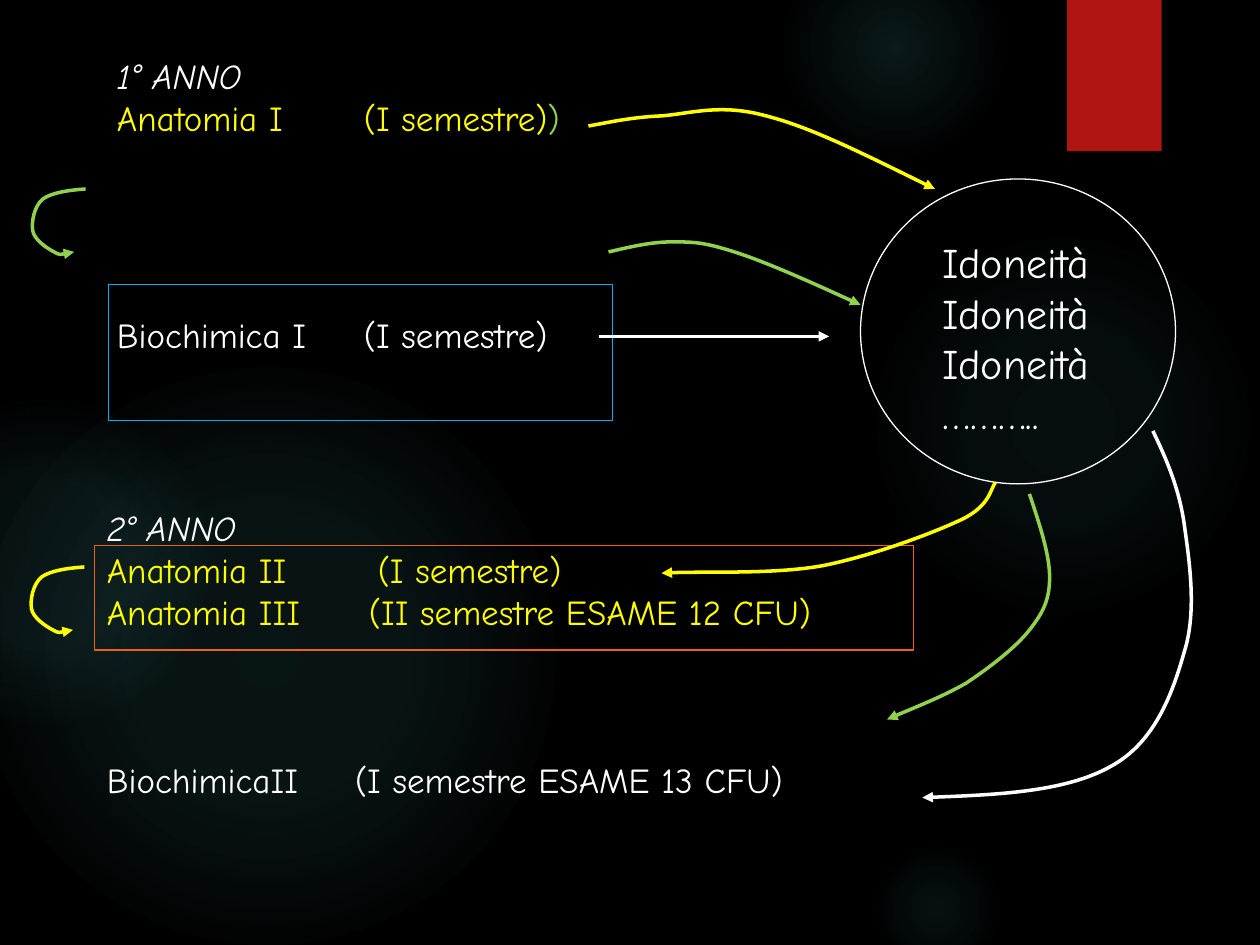
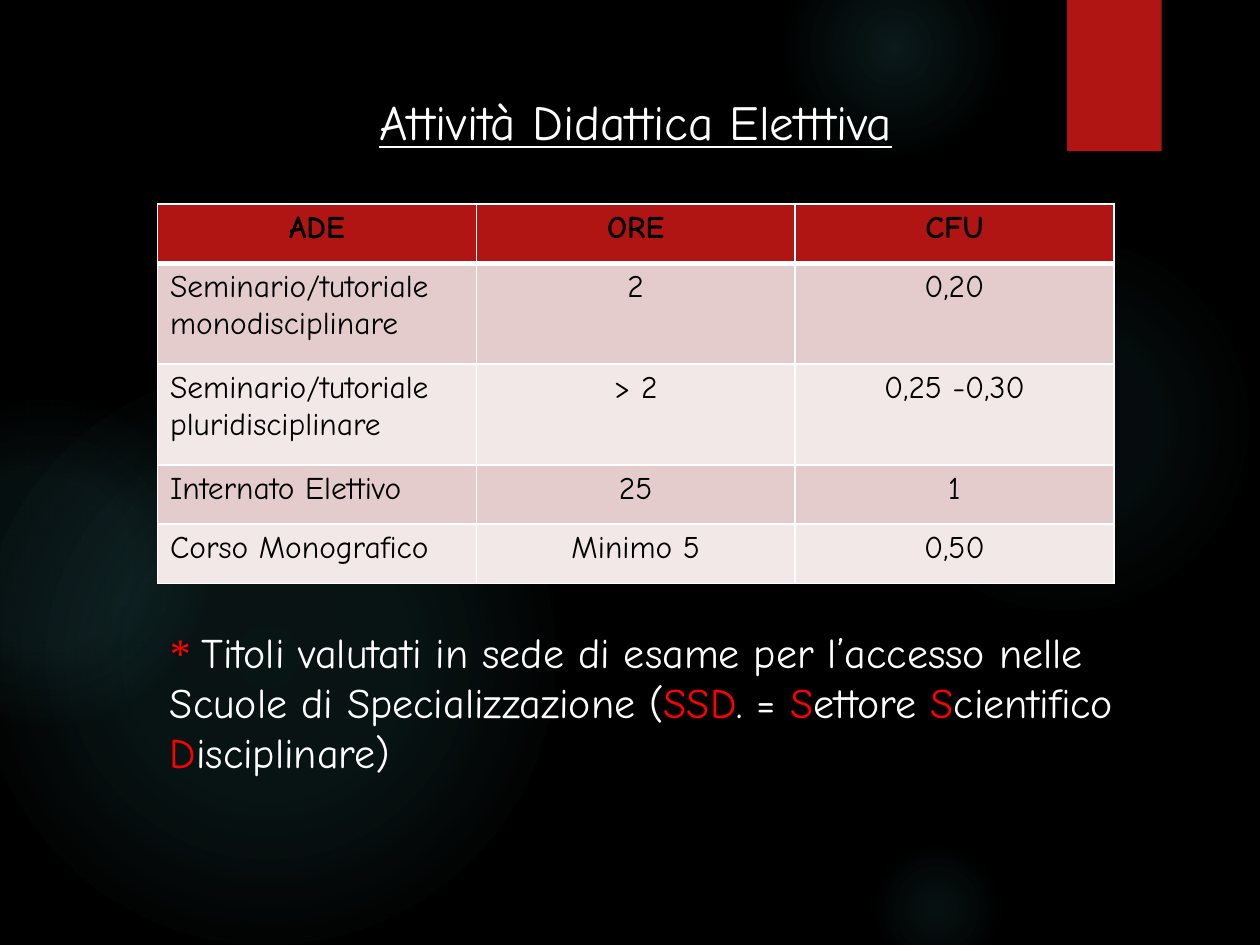
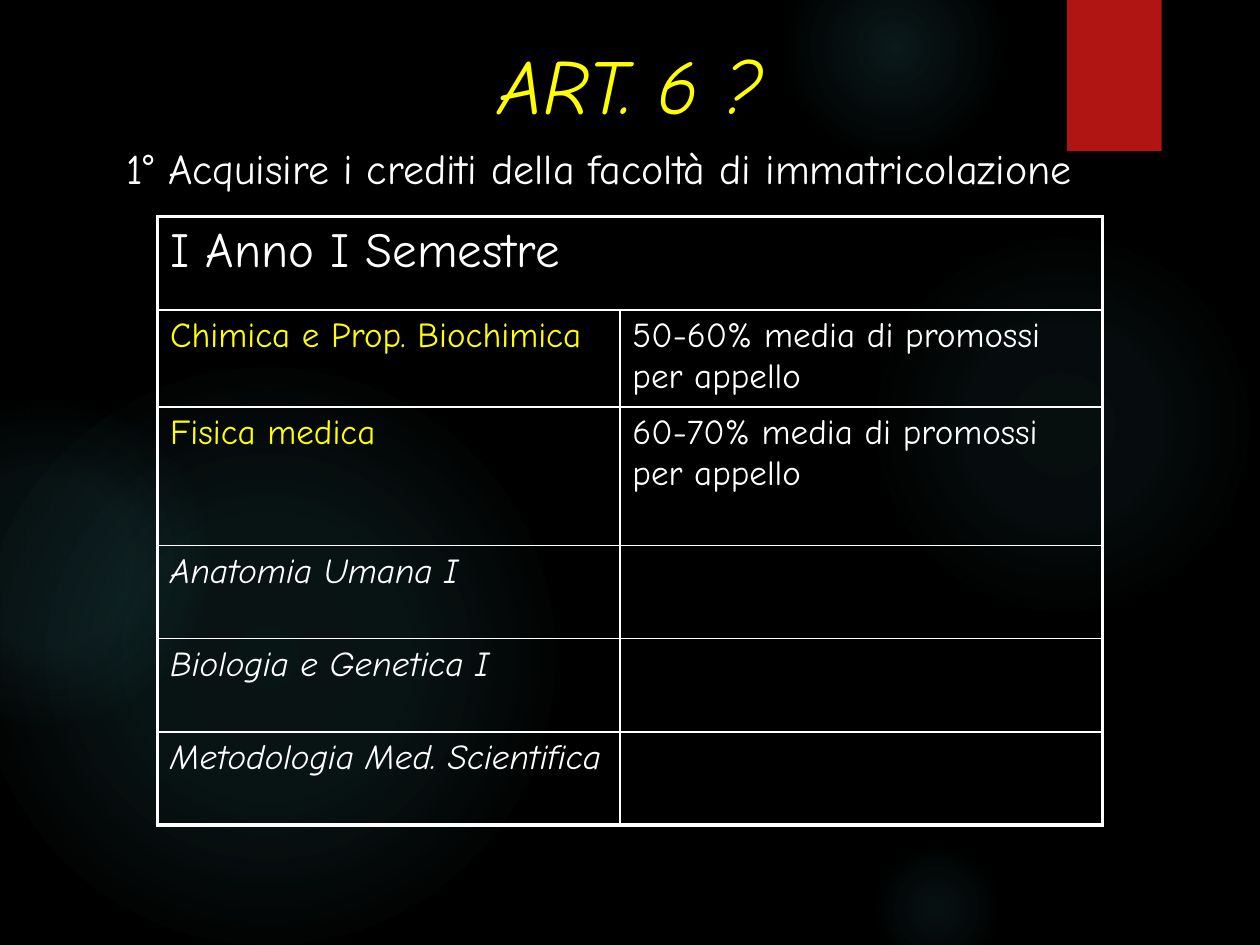
from dataclasses import dataclass
from itertools import product

from lxml.etree import SubElement
from pptx import Presentation
from pptx.dml.color import RGBColor
from pptx.enum.shapes import MSO_CONNECTOR, MSO_SHAPE
from pptx.enum.text import PP_ALIGN
from pptx.oxml import parse_xml
from pptx.oxml.ns import nsdecls, qn
from pptx.util import Inches, Pt

BLACK = RGBColor(0x00, 0x00, 0x00)
WHITE = RGBColor(0xFF, 0xFF, 0xFF)
YELLOW = RGBColor(0xFF, 0xFF, 0x00)
GREEN = RGBColor(0x92, 0xD0, 0x50)
BLUE = RGBColor(0x00, 0xB0, 0xF0)
ORANGE = RGBColor(0xEA, 0x63, 0x12)
RED = RGBColor(0xFF, 0x00, 0x00)
CRIMSON = RGBColor(0xB0, 0x15, 0x13)
ROSE = RGBColor(0xE4, 0xCC, 0xCC)
PALE_ROSE = RGBColor(0xF2, 0xE8, 0xE7)
TEAL = RGBColor(0x50, 0xB9, 0xC1)

FONT = "Comic Neue"
GLOWS = [
    ((6.89, 1.83, 3.08, 3.08), ((0, 7), (36, 6), (69, 0))),
    ((6.22, -0.5, 1.75, 1.75), ((0, 14), (36, 7), (73, 0))),
    ((6.89, 6.67, 1.08, 1.08), ((0, 9), (36, 5), (66, 0))),
    ((-0.17, 2.92, 4.58, 4.58), ((0, 11), (36, 10), (75, 0))),
    ((-0.92, 3.17, 2.58, 2.58), ((0, 8), (36, 8), (72, 0))),
]
RIBBON = (8.47, 0, 0.75, 1.2)


@dataclass
class Line:
    """One paragraph: its text or coloured runs, and how it looks."""

    text: object
    size: float = 20
    color: RGBColor = WHITE
    bold: bool = False
    italic: bool = False
    underline: bool = False
    align: PP_ALIGN = PP_ALIGN.LEFT
    tab: float = 0
    before: float = 0


class Deck:
    """Holds the shared style and the slide being drawn."""

    def __init__(self):
        self.presentation = Presentation()
        self.presentation.slide_width = Inches(10)
        self.presentation.slide_height = Inches(7.5)
        background = self.presentation.slide_master.background.fill
        background.solid()
        background.fore_color.rgb = BLACK
        self.slide = None

    def new_slide(self):
        """Start a slide with its glows and ribbon."""
        self.slide = self.presentation.slides.add_slide(self.presentation.slide_layouts[6])
        for box, stops in GLOWS:
            self.glow(box, stops)
        self.shape(MSO_SHAPE.RECTANGLE, RIBBON, fill=CRIMSON)

    def shape(self, kind, box, fill=None, line=None):
        """Draw a preset shape."""
        shape = self.slide.shapes.add_shape(kind, *map(Inches, box))
        shape.shadow.inherit = False
        for part, color in ((shape.fill, fill), (shape.line.fill, line)):
            if color is None:
                part.background()
            else:
                part.solid()
                part.fore_color.rgb = color
        if line is not None:
            shape.line.width = Pt(0.75)
        return shape

    def glow(self, box, stops):
        """Draw a soft circle from (position, opacity) stops."""
        properties = self.shape(MSO_SHAPE.OVAL, box)._element.spPr
        colors = "".join(
            f'<a:gs pos="{position * 1000}"><a:srgbClr val="{TEAL}">'
            f'<a:alpha val="{opacity * 1000}"/></a:srgbClr></a:gs>'
            for position, opacity in stops
        )
        gradient = parse_xml(
            f'<a:gradFill {nsdecls("a")}><a:gsLst>{colors}</a:gsLst><a:path path="circle">'
            '<a:fillToRect l="50000" t="50000" r="50000" b="50000"/></a:path></a:gradFill>'
        )
        properties.replace(properties.find(qn("a:noFill")), gradient)

    def arrow_line(self, shape, color):
        """Give a line its colour, width and arrowhead."""
        shape.line.color.rgb = color
        shape.line.width = Pt(2)
        SubElement(shape.line._get_or_add_ln(), qn("a:tailEnd"), type="triangle")

    def curve(self, points, color):
        """Draw an arrow along cubic curves: a start, then three points for each."""
        start, *others = [tuple(map(Inches, point)) for point in points]
        builder = self.slide.shapes.build_freeform(*start)
        builder.add_line_segments(others, close=False)
        shape = builder.convert_to_shape()
        shape.shadow.inherit = False
        shape.fill.background()
        outline = next(shape._element.iter(qn("a:path")))
        segments = outline.findall(qn("a:lnTo"))
        for index, segment in enumerate(segments):
            if index % 3 == 0:
                bezier = SubElement(outline, qn("a:cubicBezTo"))
            bezier.append(segment[0])
            outline.remove(segment)
        self.arrow_line(shape, color)

    def straight_arrow(self, start, end, color):
        """Draw a straight arrow."""
        connector = self.slide.shapes.add_connector(
            MSO_CONNECTOR.STRAIGHT, *map(Inches, start + end)
        )
        self.arrow_line(connector, color)
        SubElement(connector._element.spPr, qn("a:effectLst"))

    def fill_text(self, text_frame, lines):
        """Put lines into a text frame."""
        for index, line in enumerate(lines):
            paragraph = text_frame.add_paragraph() if index else text_frame.paragraphs[0]
            paragraph.alignment = line.align
            if line.before:
                paragraph.space_before = Pt(line.before)
            if line.tab:
                tabs = SubElement(paragraph._p.get_or_add_pPr(), qn("a:tabLst"))
                SubElement(tabs, qn("a:tab"), pos=str(Inches(line.tab)), algn="l")
            runs = [(line.text, line.color)] if isinstance(line.text, str) else line.text
            for text, color, *font in runs:
                run = paragraph.add_run()
                run.text = text
                run.font.name = font[0] if font else FONT
                run.font.size = Pt(line.size)
                run.font.color.rgb = color
                run.font.bold = line.bold
                run.font.italic = line.italic
                run.font.underline = line.underline

    def text(self, box, *lines):
        """Add a text box."""
        text_frame = self.slide.shapes.add_textbox(*map(Inches, box)).text_frame
        text_frame.word_wrap = True
        self.fill_text(text_frame, lines)

    def table(self, corner, widths, heights, rows, fills, outer=1, header=1):
        """Add a table; a row with fewer lines than columns spans the rest."""
        size = (sum(widths), sum(heights))
        frame = self.slide.shapes.add_table(
            len(rows), len(widths), *map(Inches, corner + size)
        )
        table = frame.table
        table.first_row = table.horz_banding = False
        for column, width in zip(table.columns, widths):
            column.width = Inches(width)
        for row, height in zip(table.rows, heights):
            row.height = Inches(height)
        for index, lines in enumerate(rows):
            if len(lines) < len(widths):
                table.cell(index, len(lines) - 1).merge(table.cell(index, len(widths) - 1))
            for column, line in enumerate(lines):
                self.fill_text(table.cell(index, column).text_frame, [line])
        last = len(rows) - 1
        for row, column in product(range(len(rows)), range(len(widths))):
            cell = table.cell(row, column)
            if fills[row] is None:
                cell.fill.background()
            else:
                cell.fill.solid()
                cell.fill.fore_color.rgb = fills[row]
            right = column + cell.span_width >= len(widths)
            self.borders(cell, {
                "L": 1 if column else outer,
                "R": outer if right else 1,
                "T": {0: outer, 1: header}.get(row, 1),
                "B": {0: header, last: outer}.get(row, 1),
            })

    def borders(self, cell, widths):
        """Draw a cell's white borders, in points by side."""
        properties = cell._tc.get_or_add_tcPr()
        for index, (side, width) in enumerate(widths.items()):
            properties.insert(index, parse_xml(
                f'<a:ln{side} {nsdecls("a")} w="{Pt(width)}"><a:solidFill>'
                f'<a:srgbClr val="{WHITE}"/></a:solidFill></a:ln{side}>'
            ))


def build_course_path(deck):
    """Draw the exam path over the first two years."""
    deck.new_slide()
    deck.text(
        (0.83, 0.38, 4.01, 2.52),
        Line("1° ANNO", italic=True),
        Line([("Anatomia I\t(I semestre)", YELLOW), (")", GREEN)], tab=1.96),
        Line("Biochimica I\t(I semestre)", tab=1.96, before=100),
    )
    deck.text(
        (0.75, 3.97, 6.37, 2.79),
        Line("2° ANNO", italic=True),
        Line("Anatomia II\t(I semestre)", color=YELLOW, tab=2.15),
        Line("Anatomia III\t(II semestre ESAME 12 CFU)", color=YELLOW, tab=2.08),
        Line("BiochimicaII\t(I semestre ESAME 13 CFU)", tab=1.97, before=72),
    )
    deck.shape(MSO_SHAPE.OVAL, (6.83, 1.42, 2.5, 2.42), line=WHITE)
    passes = ["Idoneità"] * 3 + ["……….."]
    deck.text((7.38, 1.83, 1.53, 1.7), *[Line(word, size=24) for word in passes])
    deck.shape(MSO_SHAPE.RECTANGLE, (0.86, 2.26, 4, 1.08), line=BLUE)
    deck.shape(MSO_SHAPE.RECTANGLE, (0.75, 4.33, 6.5, 0.83), line=ORANGE)

    to_circle = [
        ([(4.67, 1), (4.84, 0.97), (5.01, 0.93), (5.25, 0.92), (5.49, 0.9), (5.72, 0.82),
          (6.08, 0.92), (6.44, 1.01), (6.93, 1.26), (7.42, 1.5)], YELLOW),
        ([(4.83, 2), (5, 1.96), (5.17, 1.92), (5.33, 1.92), (5.5, 1.92), (5.58, 1.92),
          (5.83, 2), (6.08, 2.08), (6.46, 2.25), (6.83, 2.42)], GREEN),
    ]
    from_circle = [
        ([(7.9, 3.83), (7.86, 3.88), (7.86, 4.01), (7.64, 4.12), (7.41, 4.23), (6.93, 4.41),
          (6.53, 4.49), (6.14, 4.56), (5.52, 4.53), (5.25, 4.55)], YELLOW),
        ([(8.17, 3.92), (8.25, 4.16), (8.33, 4.4), (8.33, 4.58), (8.33, 4.76), (8.28, 4.86),
          (8.17, 5), (8.06, 5.14), (7.85, 5.3), (7.67, 5.42), (7.48, 5.53), (7.17, 5.65),
          (7.04, 5.71)], GREEN),
        ([(9.15, 3.42), (9.26, 3.65), (9.36, 3.88), (9.4, 4.17), (9.44, 4.46), (9.5, 4.85),
          (9.4, 5.17), (9.31, 5.49), (9.17, 5.89), (8.82, 6.08), (8.47, 6.28), (7.9, 6.31),
          (7.32, 6.33)], WHITE),
    ]
    for points, color in to_circle + from_circle:
        deck.curve(points, color)
    deck.straight_arrow((4.75, 2.67), (6.58, 2.67), WHITE)

    hook = [(0.43, 0), (0.29, 0.01), (0.16, 0.03), (0.09, 0.08), (0.02, 0.14), (0, 0.26),
            (0.01, 0.33), (0.02, 0.4), (0.12, 0.47), (0.18, 0.5), (0.23, 0.53), (0.29, 0.51),
            (0.34, 0.5)]
    for left, top, color in ((0.24, 4.5, YELLOW), (0.25, 1.5, GREEN)):
        deck.curve([(left + x, top + y) for x, y in hook], color)


def build_elective_activities(deck):
    """Draw the table of elective activities and its note."""
    deck.new_slide()
    center = PP_ALIGN.CENTER
    deck.text(
        (1.92, 0.68, 6.25, 0.57),
        Line("Attività Didattica Eletttiva", size=28, underline=True, align=center),
    )
    deck.text((1.25, 4.92, 7.75, 1.31), Line([
        ("* ", RED, "Times New Roman"),
        ("Titoli valutati in sede di esame per l’accesso nelle Scuole di Specializzazione (",
         WHITE),
        ("SSD", RED), (". = ", WHITE), ("S", RED), ("ettore ", WHITE),
        ("S", RED), ("cientifico ", WHITE), ("D", RED), ("isciplinare)", WHITE),
    ], size=24))
    activities = [
        ("Seminario/tutoriale monodisciplinare", "2", "0,20"),
        ("Seminario/tutoriale pluridisciplinare", "> 2", "0,25 -0,30"),
        ("Internato Elettivo", "25", "1"),
        ("Corso Monografico", "Minimo 5", "0,50"),
    ]
    rows = [[Line(title, 18, BLACK, bold=True, align=center) for title in ("ADE", "ORE", "CFU")]]
    for name, *values in activities:
        rows.append([Line(name, 18, BLACK)]
                    + [Line(value, 18, BLACK, align=center) for value in values])
    deck.table(
        (1.25, 1.62), [2.53] * 3, [0.47, 0.8, 0.8, 0.47, 0.47], rows,
        [CRIMSON] + [ROSE, PALE_ROSE] * 2, header=3,
    )


def build_article_six(deck):
    """Draw the first-semester table."""
    deck.new_slide()
    deck.text(
        (1.92, 0.25, 6.17, 0.83),
        Line("ART. 6 ?", size=44, color=YELLOW, italic=True, align=PP_ALIGN.CENTER),
    )
    rows = [
        [Line("I Anno I Semestre", size=28)],
        [Line("Chimica e Prop. Biochimica", color=YELLOW),
         Line("50-60% media di promossi per appello")],
        [Line("Fisica medica", color=YELLOW), Line("60-70% media di promossi per appello")],
    ]
    for course in ("Anatomia Umana I", "Biologia e Genetica I", "Metodologia Med. Scientifica"):
        rows.append([Line(course, italic=True), Line([])])
    deck.table(
        (1.25, 1.72), [3.67, 3.83], [0.74, 0.77, 1.1, 0.74, 0.74, 0.74], rows,
        [None] * len(rows), outer=2.25,
    )
    deck.text(
        (0.91, 1.08, 8.67, 0.5),
        Line("1° Acquisire i crediti della facoltà di immatricolazione", size=24),
    )


def main():
    """Build and save the three slides."""
    deck = Deck()
    build_course_path(deck)
    build_elective_activities(deck)
    build_article_six(deck)
    deck.presentation.save("out.pptx")


if __name__ == "__main__":
    main()
